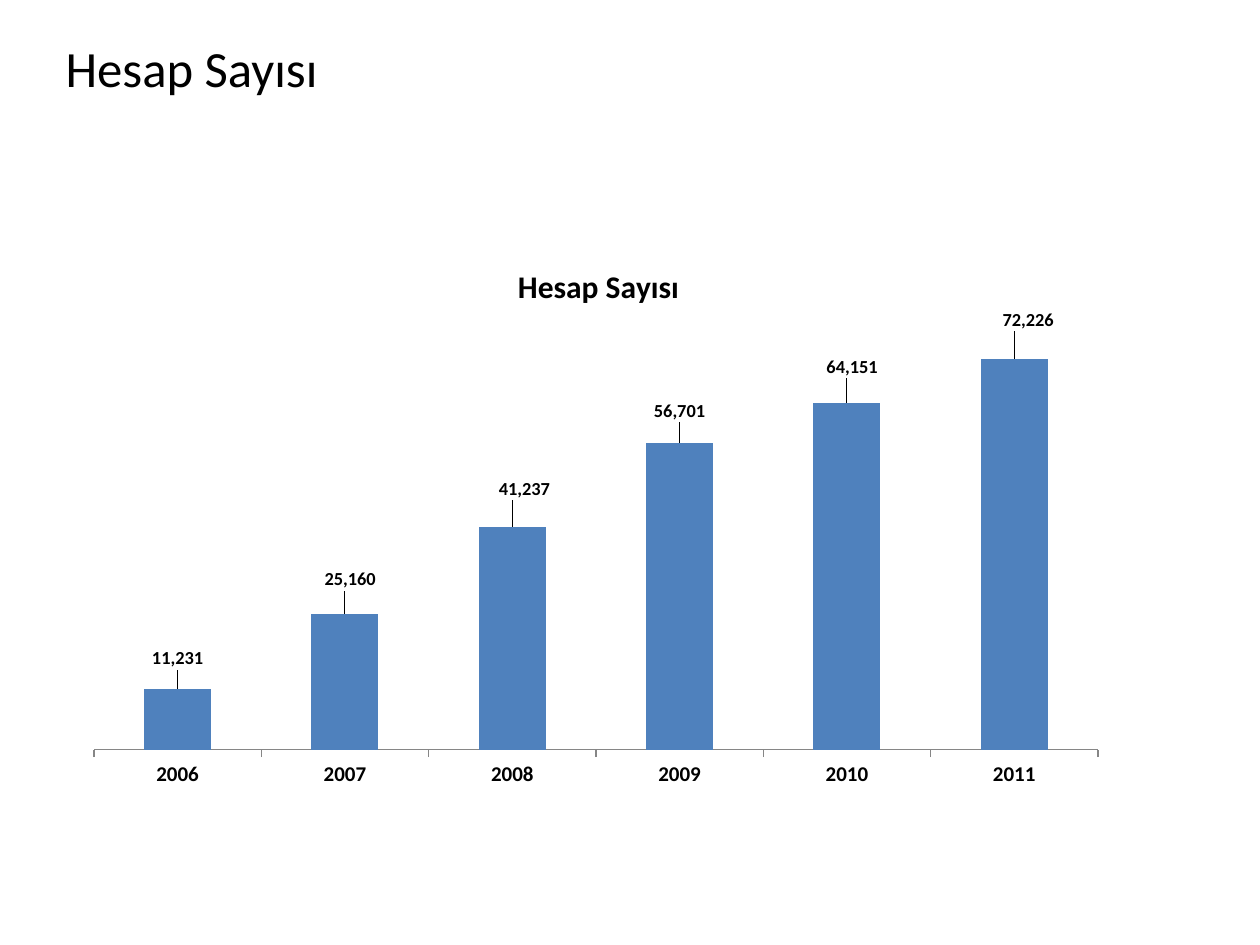
"""Build a slide with a column chart of yearly account numbers."""
from dataclasses import dataclass

from lxml import etree
from pptx import Presentation
from pptx.chart.data import CategoryChartData
from pptx.dml.color import RGBColor
from pptx.enum import chart as ch, text
from pptx.oxml import ns
from pptx.util import Pt


@dataclass(frozen=True)
class Theme:
    """Font, colours and type sizes."""
    font: str = "Calibri"
    ink: RGBColor = RGBColor(0, 0, 0)
    bar: RGBColor = RGBColor(0x4F, 0x81, 0xBD)
    axis: RGBColor = RGBColor(0x86, 0x86, 0x86)
    heading: float = 29
    chart_title: float = 18
    category: float = 12
    label: float = 10.5
    base: float = 10


@dataclass(frozen=True)
class Box:
    """A rectangle in points."""
    x: float
    y: float
    w: float
    h: float

    def lengths(self) -> list:
        """Return left, top, width and height as lengths."""
        return [Pt(v) for v in (self.x, self.y, self.w, self.h)]


@dataclass(frozen=True)
class Year:
    """One column and the shift of its label in points."""
    name: str
    accounts: int
    dx: float
    dy: float


THEME = Theme()
TITLE = "Hesap Sayısı"
HEADING = Box(30.24, 17.28, 521.28, 61.92)
CHART = Box(41.76, 131.76, 597.6, 324.72)
YEARS = [
    Year("2006", 11231, 0, -8),
    Year("2007", 25160, 3, -10),
    Year("2008", 41237, 7, -12),
    Year("2009", 56701, 0, -9),
    Year("2010", 64151, 3, -11),
    Year("2011", 72226, 8, -13),
]


def style(font, size: float, bold: bool = False) -> None:
    """Apply the theme font to a font object."""
    font.name, font.size, font.bold = THEME.font, Pt(size), bold
    font.color.rgb = THEME.ink


def set_layout(after, **values) -> None:
    """Place a manual chart layout directly after an element."""
    for old in after.getparent().findall(ns.qn("c:layout")):
        after.getparent().remove(old)
    layout = etree.Element(ns.qn("c:layout"))
    manual = etree.SubElement(layout, ns.qn("c:manualLayout"))
    for tag, value in values.items():
        val = value if isinstance(value, str) else f"{value:.4f}"
        etree.SubElement(manual, ns.qn(f"c:{tag}")).set("val", val)
    after.addnext(layout)


def add_heading(s) -> None:
    """Fill and place the title placeholder."""
    sp = s.shapes.title
    sp.left, sp.top, sp.width, sp.height = HEADING.lengths()
    tf = sp.text_frame
    tf.word_wrap = True
    tf.auto_size = text.MSO_AUTO_SIZE.NONE
    tf.vertical_anchor = text.MSO_ANCHOR.TOP
    p = tf.paragraphs[0]
    p.alignment = text.PP_ALIGN.LEFT
    r = p.add_run()
    r.text = TITLE
    style(r.font, THEME.heading)


def add_chart_title(chart) -> None:
    """Write the chart title and set its place."""
    title = chart.chart_title
    r = title.text_frame.paragraphs[0].add_run()
    r.text = TITLE
    style(r.font, THEME.chart_title, True)
    set_layout(title._element.find(ns.qn("c:tx")),
               xMode="edge", yMode="edge", x=0.42, y=0.05)


def format_axes(chart) -> None:
    """Show the category axis and hide the value axis."""
    cat, val = chart.category_axis, chart.value_axis
    style(cat.tick_labels.font, THEME.category, True)
    cat.major_tick_mark = ch.XL_TICK_MARK.OUTSIDE
    cat.format.line.color.rgb = THEME.axis
    cat.format.line.width = Pt(0.75)
    val.minimum_scale, val.maximum_scale = 0, 80000
    val.has_major_gridlines = False
    val.visible = False


def add_labels(series) -> None:
    """Label every column with its value, shifted from the column end."""
    for i, year in enumerate(YEARS):
        label = series.points[i].data_label
        style(label.font, THEME.label, True)
        label.position = ch.XL_LABEL_POSITION.OUTSIDE_END
        idx = series._element.xpath(f"c:dLbls/c:dLbl/c:idx[@val='{i}']")[0]
        set_layout(idx, x=year.dx / CHART.w, y=year.dy / CHART.h)


def add_column_chart(s) -> None:
    """Add the column chart."""
    data = CategoryChartData(number_format="#,##0")
    data.categories = [year.name for year in YEARS]
    data.add_series("Series 1", [year.accounts for year in YEARS])
    chart = s.shapes.add_chart(
        ch.XL_CHART_TYPE.COLUMN_CLUSTERED, *CHART.lengths(), data).chart
    chart.has_legend = False
    style(chart.font, THEME.base)
    add_chart_title(chart)
    format_axes(chart)
    plot = chart.plots[0]
    plot.gap_width = 150
    plot.vary_by_categories = False
    series = plot.series[0]
    series.format.fill.solid()
    series.format.fill.fore_color.rgb = THEME.bar
    add_labels(series)
    area = chart._chartSpace.chart.plotArea
    for old in area.findall(ns.qn("c:layout")):
        area.remove(old)
    anchor = etree.Element(ns.qn("c:layout"))
    area.insert(0, anchor)
    manual = etree.SubElement(anchor, ns.qn("c:manualLayout"))
    for tag, value in (("layoutTarget", "inner"), ("xMode", "edge"),
                       ("yMode", "edge"), ("x", "0.02"), ("y", "0.152"),
                       ("w", "0.96"), ("h", "0.762")):
        etree.SubElement(manual, ns.qn(f"c:{tag}")).set("val", value)


def main() -> None:
    """Build and save the slide."""
    prs = Presentation()
    prs.slide_width, prs.slide_height = Pt(720), Pt(540)
    s = prs.slides.add_slide(prs.slide_layouts[5])
    add_column_chart(s)
    add_heading(s)
    prs.save("out.pptx")


if __name__ == "__main__":
    main()
